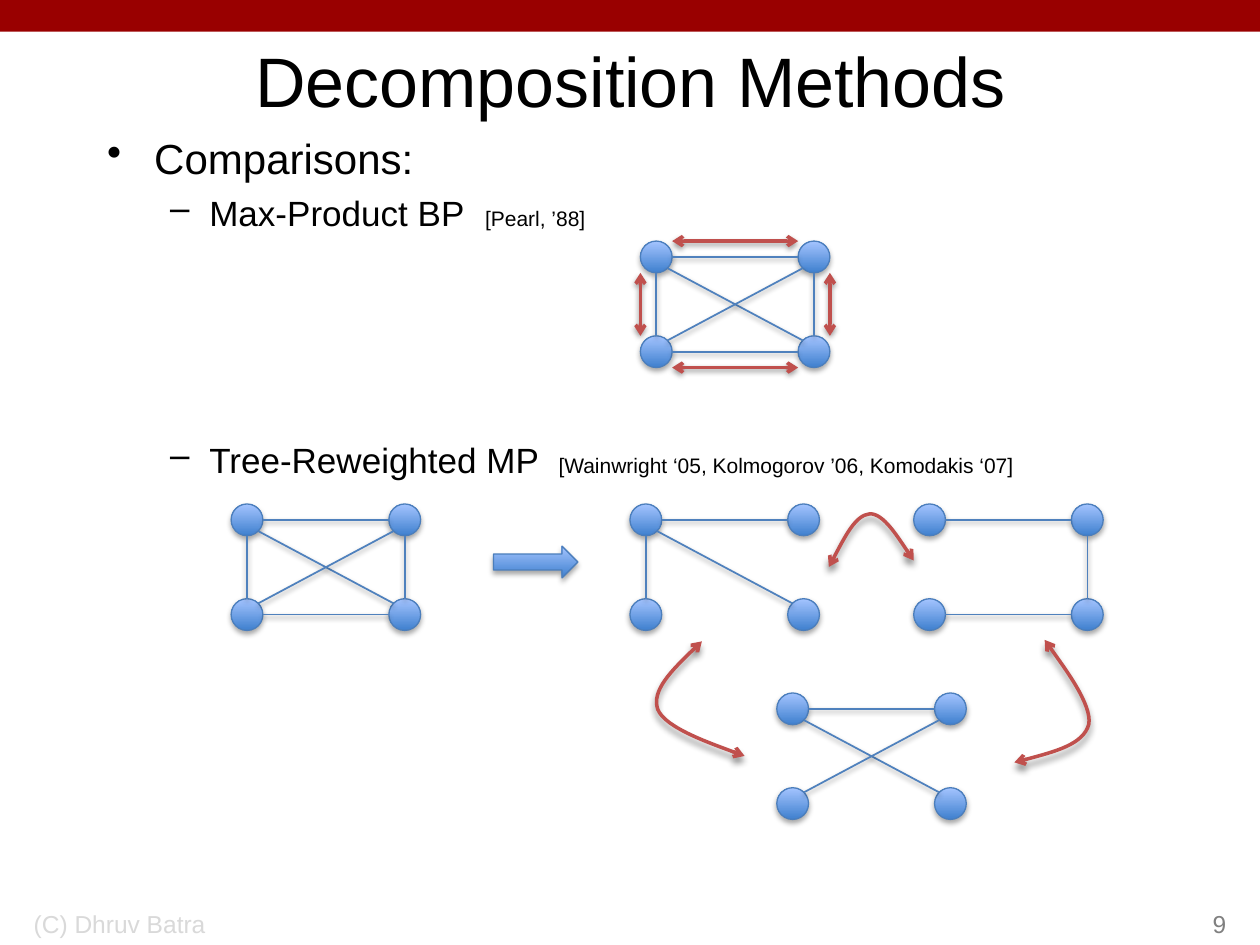
from lxml import etree
from pptx import Presentation, util as u
from pptx.dml.color import RGBColor
from pptx.enum import shapes, text
from pptx.oxml.ns import qn

BLACK = RGBColor(0x00, 0x00, 0x00)
BANNER_RED = RGBColor(0x99, 0x00, 0x00)
ARROW_RED = RGBColor(0xC0, 0x50, 0x4D)
EDGE_BLUE = RGBColor(0x4F, 0x81, 0xBD)
OUTLINE_BLUE = RGBColor(0x4B, 0x7E, 0xBC)
DARK_BLUE = RGBColor(0x3F, 0x80, 0xCE)
LIGHT_BLUE = RGBColor(0xA4, 0xC4, 0xFF)
PALE_GREY = RGBColor(0xD9, 0xD9, 0xD9)
GREY = RGBColor(0x80, 0x80, 0x80)

NODE, PITCH_X, PITCH_Y = 0.64, 3.18, 1.91
TL, TR, BL, BR = (0, 0), (1, 0), (0, 1), (1, 1)
FULL_GRAPH = [(TL, TR), (BL, BR), (TL, BR), (TL, BL), (TR, BR), (TR, BL)]
GRAPHS = [
    (12.91, 4.86, FULL_GRAPH),
    (4.66, 10.16, FULL_GRAPH),
    (12.70, 10.16, [(TL, TR), (TL, BR), (TL, BL)]),
    (18.42, 10.16, [(TL, TR), (BL, BR), (TR, BR)]),
    (15.66, 13.97, [(TL, TR), (TL, BR), (TR, BL)]),
]
CURVES = [
    [(14.15, 12.93), (13.64, 13.41), (13.13, 13.92), (13.26, 14.30),
     (13.41, 14.68), (15.01, 15.24), (15.01, 15.24)],
    [(20.45, 15.37), (21.13, 15.19), (21.84, 15.01), (21.95, 14.60),
     (22.02, 14.20), (21.06, 12.90), (21.06, 12.90)],
    [(16.71, 11.43), (16.99, 10.90), (17.25, 10.39), (17.53, 10.36),
     (17.81, 10.34), (18.42, 11.30), (18.42, 11.30)],
]


def sign(number):
    return (number > 0) - (number < 0)


def add_xml(parent, tag, **attributes):
    return etree.SubElement(parent, qn(tag), **attributes)


class SlideBuilder:
    """Draws styled text, graphs and arrows on one slide."""

    def __init__(self, slide, font="Arial"):
        self.slide = slide
        self.font = font

    def format_span(self, span, size, color):
        span.font.name = self.font
        span.font.size = u.Pt(size)
        span.font.color.rgb = color

    def text_box(self, left, top, width, height, anchor):
        box = self.slide.shapes.add_textbox(*map(u.Cm, (left, top, width, height)))
        box.text_frame.word_wrap = True
        box.text_frame.vertical_anchor = anchor
        return box

    def label(self, place, words, size, color, align, anchor):
        box = self.text_box(*place, anchor)
        box.text_frame.text = words
        para = box.text_frame.paragraphs[0]
        para.alignment = align
        self.format_span(para.runs[0], size, color)

    def bullet(self, para, words, size, mark, margin, hanging, before=0, cite="", tab=0):
        para.text = words
        self.format_span(para.runs[0], size, BLACK)
        if before:
            para.space_before = u.Pt(before)
        props = para._p.get_or_add_pPr()
        props.set("marL", str(u.Cm(margin)))
        props.set("indent", str(-u.Cm(hanging)))
        add_xml(props, "a:buChar", char=mark)
        if cite:
            stops = add_xml(props, "a:tabLst")
            add_xml(stops, "a:tab", pos=str(u.Cm(tab)), algn="l")
            span = para.add_run()
            span.text = "\t" + cite
            self.format_span(span, 12, BLACK)

    def shadow(self, shape, alpha, blur, distance):
        props = shape._element.spPr
        effects = props.find(qn("a:effectLst"))
        if effects is None:
            effects = add_xml(props, "a:effectLst")
        outer = add_xml(effects, "a:outerShdw", blurRad=str(u.Pt(blur)),
                        dist=str(u.Pt(distance)), dir="5400000", rotWithShape="0")
        color = add_xml(outer, "a:srgbClr", val=str(BLACK))
        add_xml(color, "a:alpha", val=str(alpha * 1000))

    def stroke(self, shape, color, width, arrows=False):
        shape.line.color.rgb = color
        shape.line.width = u.Pt(width)
        if arrows:
            line = shape._element.spPr.find(qn("a:ln"))
            for end in ("a:headEnd", "a:tailEnd"):
                add_xml(line, end, type="arrow")

    def banner(self, width, height):
        bar = self.slide.shapes.add_shape(
            shapes.MSO_SHAPE.RECTANGLE, 0, 0, u.Cm(width), u.Cm(height))
        bar.shadow.inherit = False
        bar.fill.solid()
        bar.fill.fore_color.rgb = BANNER_RED
        bar.line.fill.background()

    def glossy(self, kind, left, top, width, height, parent=None):
        parent = parent or self.slide
        shape = parent.shapes.add_shape(kind, *map(u.Cm, (left, top, width, height)))
        shape.fill.gradient()
        shape.fill.gradient_angle = 90
        for stop, color in zip(shape.fill.gradient_stops, (DARK_BLUE, LIGHT_BLUE)):
            stop.color.rgb = color
        for stop, position in zip(shape.fill.gradient_stops, (0, 1)):
            stop.position = position
        self.stroke(shape, OUTLINE_BLUE, 0.75)
        shape.shadow.inherit = False
        self.shadow(shape, 35, 3.1, 1.8)

    def line(self, start, end, color, width, arrows=False, parent=None):
        parent = parent or self.slide
        line = parent.shapes.add_connector(
            shapes.MSO_CONNECTOR.STRAIGHT, *map(u.Cm, (*start, *end)))
        self.stroke(line, color, width, arrows)
        self.shadow(line, 38, 3.1, 1.6)

    def graph(self, left, top, edges):
        group = self.slide.shapes.add_group_shape()
        group.shapes
        for column, row in (TL, TR, BL, BR):
            self.glossy(shapes.MSO_SHAPE.OVAL, left + column * PITCH_X,
                        top + row * PITCH_Y, NODE, NODE, group)
        for start, end in edges:
            dx, dy = (sign(b - a) for a, b in zip(start, end))
            reach = NODE / 2 * (0.71 if dx and dy else 1)
            ends = [(left + NODE / 2 + column * PITCH_X + side * dx * reach,
                     top + NODE / 2 + row * PITCH_Y + side * dy * reach)
                    for (column, row), side in ((start, 1), (end, -1))]
            self.line(*ends, EDGE_BLUE, 1, parent=group)

    def messages(self, left, top):
        for y in (top, top + PITCH_Y + NODE):
            self.line((left + NODE, y), (left + PITCH_X, y), ARROW_RED, 2, True)
        for x in (left, left + PITCH_X + NODE):
            self.line((x, top + NODE), (x, top + PITCH_Y), ARROW_RED, 2, True)

    def curve(self, points):
        spots = [(u.Cm(x), u.Cm(y)) for x, y in points]
        builder = self.slide.shapes.build_freeform(*spots[0])
        builder.add_line_segments(spots[1:], close=False)
        curve = builder.convert_to_shape()
        segments = list(curve._element.iter(qn("a:lnTo")))
        outline = segments[0].getparent()
        for first in range(0, len(segments), 3):
            bezier = add_xml(outline, "a:cubicBezTo")
            for segment in segments[first:first + 3]:
                bezier.append(segment[0])
                outline.remove(segment)
        curve.fill.background()
        self.stroke(curve, ARROW_RED, 2, True)
        curve.shadow.inherit = False
        self.shadow(curve, 43, 4, 3)


def main():
    deck = Presentation()
    deck.slide_width, deck.slide_height = u.Cm(25.4), u.Cm(19.05)
    page = SlideBuilder(deck.slides.add_slide(deck.slide_layouts[6]))
    align, anchor = text.PP_ALIGN, text.MSO_ANCHOR

    page.banner(25.4, 0.64)
    page.label((1.91, 0.64, 21.59, 1.91), "Decomposition Methods", 40, BLACK,
               align.CENTER, anchor.MIDDLE)
    frame = page.text_box(1.91, 2.54, 21.59, 15.24, anchor.TOP).text_frame
    page.bullet(frame.paragraphs[0], "Comparisons:", 24, "•", 0.95, 0.95)
    page.bullet(frame.add_paragraph(), "Max-Product BP", 20, "–", 2.06, 0.79,
                5, "[Pearl, ’88]", 7.62)
    page.bullet(frame.add_paragraph(), "Tree-Reweighted MP", 20, "–", 2.06, 0.79,
                117, "[Wainwright ‘05, Kolmogorov ’06, Komodakis ‘07]", 9.1)
    page.label((0.43, 17.78, 8.05, 1.27), "(C) Dhruv Batra", 14, PALE_GREY,
               align.LEFT, anchor.BOTTOM)
    page.label((19.69, 17.78, 5.28, 1.27), "9", 14, GREY, align.RIGHT, anchor.BOTTOM)

    for left, top, edges in GRAPHS:
        page.graph(left, top, edges)
    page.messages(*GRAPHS[0][:2])
    page.glossy(shapes.MSO_SHAPE.RIGHT_ARROW, 9.95, 11.01, 1.7, 0.64)
    for points in CURVES:
        page.curve(points)
    deck.save("out.pptx")


if __name__ == "__main__":
    main()
